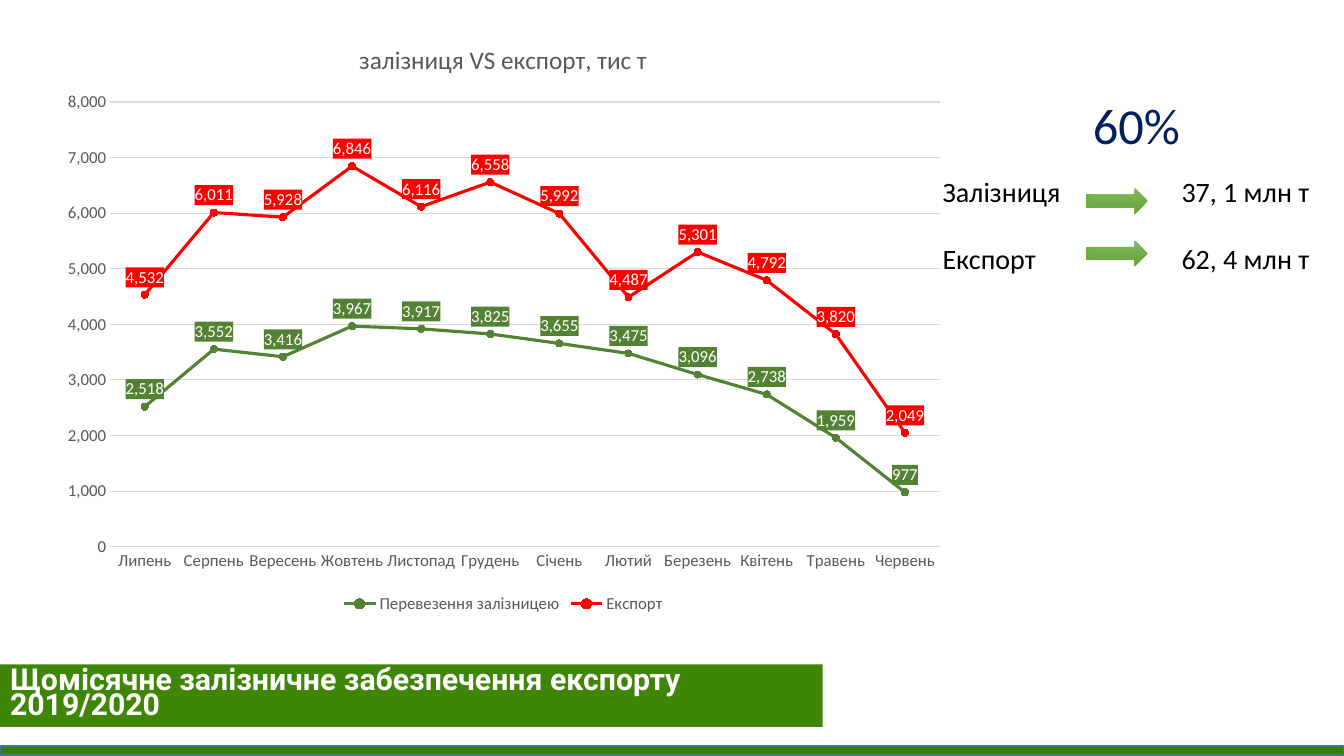
from dataclasses import dataclass

from lxml import etree
from pptx import Presentation
from pptx.chart.chart import Chart
from pptx.chart.data import CategoryChartData
from pptx.dml.color import RGBColor
from pptx.enum.chart import (XL_CHART_TYPE, XL_LABEL_POSITION, XL_LEGEND_POSITION,
                             XL_MARKER_STYLE, XL_TICK_MARK)
from pptx.enum.shapes import MSO_SHAPE
from pptx.enum.text import MSO_ANCHOR, MSO_AUTO_SIZE, PP_ALIGN
from pptx.oxml import parse_xml
from pptx.oxml.ns import nsdecls, qn
from pptx.slide import Slide
from pptx.util import Inches, Pt

LINE_MARKERS = XL_CHART_TYPE.LINE_MARKERS
ABOVE = XL_LABEL_POSITION.ABOVE
LEGEND_BOTTOM = XL_LEGEND_POSITION.BOTTOM
CIRCLE = XL_MARKER_STYLE.CIRCLE
NO_TICK = XL_TICK_MARK.NONE
RECTANGLE = MSO_SHAPE.RECTANGLE
STRIPED_ARROW = MSO_SHAPE.STRIPED_RIGHT_ARROW
MIDDLE, TOP = MSO_ANCHOR.MIDDLE, MSO_ANCHOR.TOP
NO_AUTOFIT = MSO_AUTO_SIZE.NONE
LEFT = PP_ALIGN.LEFT
TITLE_ONLY = 5


@dataclass(frozen=True)
class Theme:
    body_font: str = "Calibri"
    title_font: str = "Roboto"
    title_size: float = 21.6
    share_size: float = 36
    total_size: float = 20
    chart_title_size: float = 18
    chart_size: float = 12
    banner: str = "408606"
    footer: str = "397E06"
    footer_line: str = "43739E"
    white: str = "FFFFFF"
    black: str = "000000"
    navy: str = "002060"
    grey: str = "595959"
    grid: str = "D9D9D9"
    rail: str = "548235"
    export: str = "FF0000"
    arrow_top: str = "81B861"
    arrow_bottom: str = "62A336"
    arrow_line: str = "70AD47"


@dataclass(frozen=True)
class Flow:
    name: str
    color: str
    tonnage: tuple[int, ...]


@dataclass(frozen=True)
class Total:
    label: str
    amount: str
    arrow_top: float


THEME = Theme()
MONTHS = ("Липень", "Серпень", "Вересень", "Жовтень", "Листопад", "Грудень",
          "Січень", "Лютий", "Березень", "Квітень", "Травень", "Червень")
FLOWS = (
    Flow("Перевезення залізницею", THEME.rail,
         (2518, 3552, 3416, 3967, 3917, 3825, 3655, 3475, 3096, 2738, 1959, 977)),
    Flow("Експорт", THEME.export,
         (4532, 6011, 5928, 6846, 6116, 6558, 5992, 4487, 5301, 4792, 3820, 2049)),
)
TOTALS = (Total("Залізниця", "37, 1 млн т", 1.87), Total("Експорт", "62, 4 млн т", 2.39))


def rgb(color: str) -> RGBColor:
    return RGBColor.from_string(color)


def style_font(font, size: float, color: str, name: str = THEME.body_font,
               bold: bool = False) -> None:
    font.name, font.size, font.bold = name, Pt(size), bold
    font.color.rgb = rgb(color)


def place_plot(chart: Chart) -> None:
    """Fix the inner plot area as fractions of the chart."""
    plot_area = chart._chartSpace.find(".//" + qn("c:plotArea"))
    for old_layout in plot_area.findall(qn("c:layout")):
        plot_area.remove(old_layout)
    layout = parse_xml(f"<c:layout {nsdecls('c')}><c:manualLayout/></c:layout>")
    settings = {"layoutTarget": "inner", "xMode": "edge", "yMode": "edge",
                "x": "0.067", "y": "0.137", "w": "0.914", "h": "0.744"}
    for tag, value in settings.items():
        etree.SubElement(layout[0], qn(f"c:{tag}")).set("val", value)
    plot_area.insert(0, layout)


def style_flow(series, flow: Flow) -> None:
    series.smooth = False
    series.format.line.color.rgb = rgb(flow.color)
    series.format.line.width = Pt(2.25)
    marker = series.marker
    marker.style, marker.size = CIRCLE, 5
    marker.format.fill.solid()
    marker.format.fill.fore_color.rgb = rgb(flow.color)
    marker.format.line.color.rgb = rgb(flow.color)

    labels = series.data_labels
    labels.show_value = True
    labels.position = ABOVE
    labels.number_format, labels.number_format_is_linked = "#,##0", False
    style_font(labels.font, THEME.chart_size, THEME.white)
    label_fill = parse_xml(
        f'<c:spPr {nsdecls("c", "a")}><a:solidFill><a:srgbClr val="{flow.color}"/>'
        "</a:solidFill></c:spPr>")
    labels._element.find(qn("c:numFmt")).addnext(label_fill)


def add_flow_chart(slide: Slide) -> None:
    data = CategoryChartData(number_format="#,##0")
    data.categories = MONTHS
    for flow in FLOWS:
        data.add_series(flow.name, flow.tonnage)
    chart = slide.shapes.add_chart(LINE_MARKERS, Inches(0.49), Inches(0.2),
                                   Inches(9), Inches(5.93), data).chart
    style_font(chart.font, THEME.chart_size, THEME.grey)
    chart.has_title = True
    heading = chart.chart_title.text_frame.paragraphs[0].add_run()
    heading.text = "залізниця VS експорт, тис т"
    style_font(heading.font, THEME.chart_title_size, THEME.grey)
    chart.has_legend = True
    chart.legend.position = LEGEND_BOTTOM
    chart.legend.include_in_layout = False
    style_font(chart.legend.font, THEME.chart_size, THEME.grey)

    months, tonnes = chart.category_axis, chart.value_axis
    for axis in (months, tonnes):
        axis.major_tick_mark = axis.minor_tick_mark = NO_TICK
        style_font(axis.tick_labels.font, THEME.chart_size, THEME.grey)
    tonnes.minimum_scale, tonnes.maximum_scale, tonnes.major_unit = 0, 8000, 1000
    tonnes.tick_labels.number_format = "#,##0"
    tonnes.tick_labels.number_format_is_linked = False
    tonnes.format.line.fill.background()
    for line in (months.format.line, tonnes.major_gridlines.format.line):
        line.color.rgb = rgb(THEME.grid)
        line.width = Pt(0.75)

    plot = chart.plots[0]
    plot.vary_by_categories = False
    for series, flow in zip(plot.series, FLOWS):
        style_flow(series, flow)
    place_plot(chart)


def add_totals(slide: Slide) -> None:
    frame = slide.shapes.add_textbox(Inches(9.25), Inches(1.68),
                                     Inches(4.08), Inches(1.11)).text_frame
    frame.word_wrap = True
    for index, total in enumerate(TOTALS):
        row = frame.add_paragraph() if index else frame.paragraphs[0]
        tabs = etree.SubElement(row._p.get_or_add_pPr(), qn("a:tabLst"))
        etree.SubElement(tabs, qn("a:tab"), pos=str(Inches(2.37)), algn="l")
        if index:
            row.space_before = Pt(24)
        for text in (total.label, "\t" + total.amount):
            run = row.add_run()
            run.text = text
            style_font(run.font, THEME.total_size, THEME.black)

        arrow = slide.shapes.add_shape(STRIPED_ARROW, Inches(10.77), Inches(total.arrow_top),
                                       Inches(0.61), Inches(0.25))
        arrow.shadow.inherit = False
        arrow.fill.gradient()
        arrow.fill.gradient_angle = 270
        for stop, color in zip(arrow.fill.gradient_stops,
                               (THEME.arrow_top, THEME.arrow_bottom)):
            stop.color.rgb = rgb(color)
        arrow.line.color.rgb = rgb(THEME.arrow_line)
        arrow.line.width = Pt(0.5)


def add_share(slide: Slide) -> None:
    frame = slide.shapes.add_textbox(Inches(10.74), Inches(0.88),
                                     Inches(1.29), Inches(0.71)).text_frame
    frame.word_wrap = True
    share = frame.paragraphs[0].add_run()
    share.text = "60%"
    style_font(share.font, THEME.share_size, THEME.navy)


def fill_banner(slide: Slide) -> None:
    banner = slide.shapes.title
    banner.left, banner.top = Inches(0), Inches(6.59)
    banner.width, banner.height = Inches(8.16), Inches(0.62)
    banner.fill.solid()
    banner.fill.fore_color.rgb = rgb(THEME.banner)
    frame = banner.text_frame
    frame.word_wrap, frame.auto_size, frame.vertical_anchor = True, NO_AUTOFIT, MIDDLE
    paragraph = frame.paragraphs[0]
    paragraph.alignment, paragraph.line_spacing = LEFT, 0.7
    run = paragraph.add_run()
    run.text = "Щомісячне залізничне забезпечення експорту 2019/2020"
    style_font(run.font, THEME.title_size, THEME.white, THEME.title_font, bold=True)


def add_footer(slide: Slide) -> None:
    footer = slide.shapes.add_shape(RECTANGLE, Inches(0), Inches(7.4),
                                    Inches(13.33), Inches(0.09))
    footer.shadow.inherit = False
    footer.fill.solid()
    footer.fill.fore_color.rgb = rgb(THEME.footer)
    footer.line.color.rgb = rgb(THEME.footer_line)
    footer.line.width = Pt(1)


def main() -> None:
    deck = Presentation()
    deck.slide_width, deck.slide_height = Inches(13.33), Inches(7.5)
    slide = deck.slides.add_slide(deck.slide_layouts[TITLE_ONLY])
    add_footer(slide)
    add_flow_chart(slide)
    add_totals(slide)
    fill_banner(slide)
    add_share(slide)
    deck.save("out.pptx")


if __name__ == "__main__":
    main()
